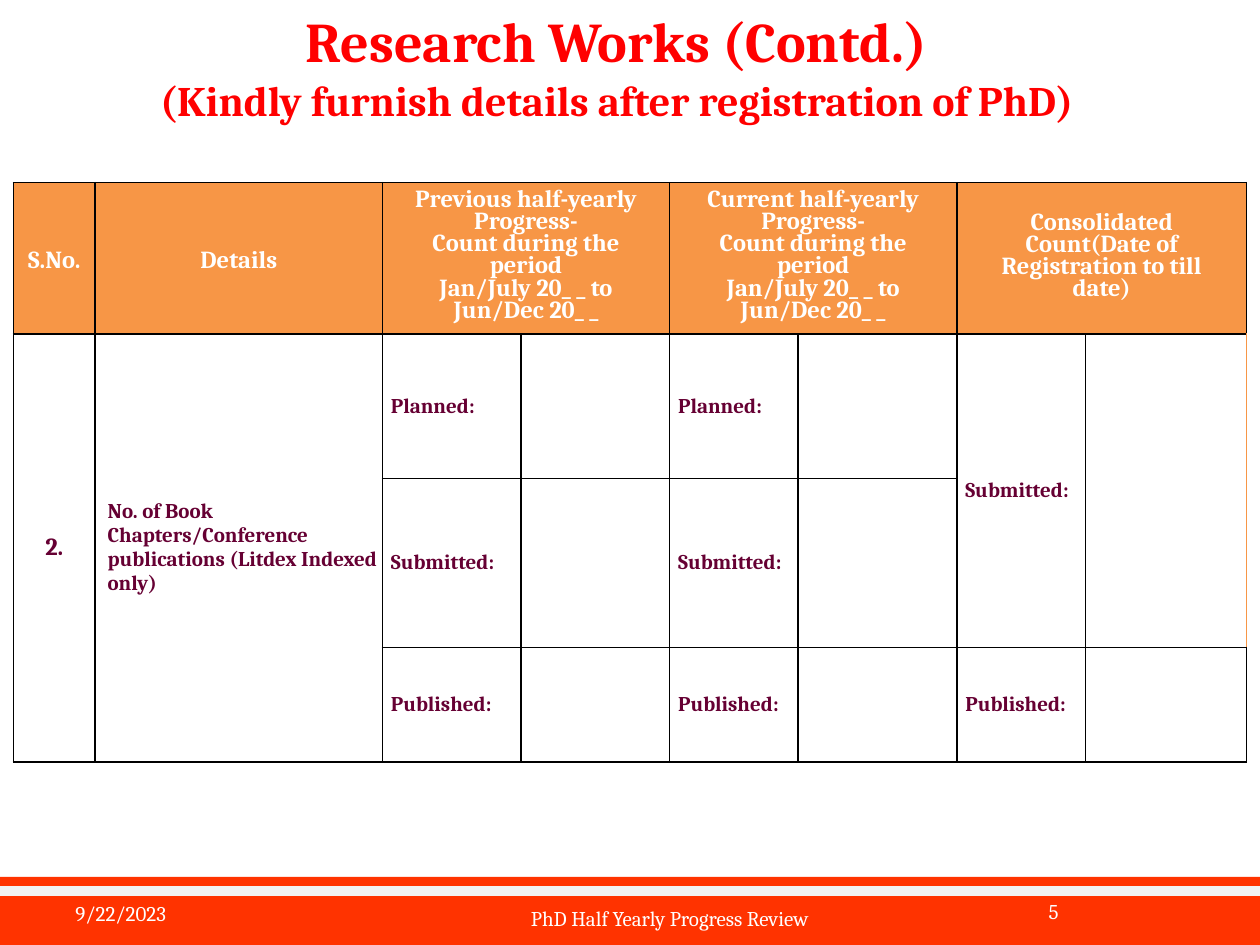
"""Build the half-yearly research progress slide."""
from lxml import etree
from pptx import Presentation
from pptx import util as u
from pptx.dml.color import RGBColor
from pptx.enum import shapes, text
from pptx.oxml.ns import qn

THEME = dict(font="Cambria", title="FF0000", head="F79646", body="660033",
             bar="FF3300", stripe="F2F2F2", white="FFFFFF", grid="000000",
             big=32, sub=24, mid=14, small=12)
LEFT, MID, RIGHT = text.PP_ALIGN.LEFT, text.PP_ALIGN.CENTER, text.PP_ALIGN.RIGHT

TITLE = [("Research Works (Contd.)", THEME["big"]),
         ("(Kindly furnish details after registration of PhD)", THEME["sub"])]
SPAN = "Jan/July 20_ _ to Jun/Dec 20_ _"
HEADS = {
    0: ["S.No."],
    1: ["Details"],
    2: ["Previous half-yearly Progress-", "Count during the period", SPAN],
    4: ["Current half-yearly Progress-", "Count during the period", SPAN],
    6: ["Consolidated Count(Date of Registration to till date)"],
}
ITEM = ("2.", "No. of Book Chapters/Conference publications (Litdex Indexed only)")
STAGES = {2: ["Planned:", "Submitted:", "Published:"],
          4: ["Planned:", "Submitted:", "Published:"],
          6: ["Submitted:", "", "Published:"]}
MERGES = [(0, 2, 0, 3), (0, 4, 0, 5), (0, 6, 0, 7),
          (1, 0, 3, 0), (1, 1, 3, 1), (1, 6, 2, 6), (1, 7, 2, 7)]
COLS = [1.65, 5.79, 2.79, 3, 2.59, 3.2, 2.59, 3.25]
ROWS = [3.05, 2.92, 3.4, 2.31]
FOOT = [("9/22/2023", 1.27, 18.03, 5.92, LEFT),
        ("5", 18.62, 17.98, 2.97, RIGHT),
        ("PhD Half Yearly Progress Review", 8.69, 18.14, 9.63, MID)]


def color(key):
    return RGBColor.from_string(THEME[key])


def style(par, size, tint, bold=True, align=LEFT):
    par.alignment = align
    for run in par.runs:
        font = run.font
        font.name, font.size, font.bold = THEME["font"], u.Pt(size), bold
        font.color.rgb = color(tint)


def border(cell, tints):
    props = cell._tc.get_or_add_tcPr()
    for side, tint in zip("LRTB", tints):
        line = etree.SubElement(props, qn(f"a:ln{side}"), w=str(u.Pt(1)))
        fill = etree.SubElement(line, qn("a:solidFill"))
        etree.SubElement(fill, qn("a:srgbClr"), val=THEME[tint])


def write(cell, lines, size, tint, align):
    cell.text_frame.text = "\n".join(lines)
    for par in cell.text_frame.paragraphs:
        style(par, size, tint, align=align)


def add_title(slide):
    box = slide.shapes.title
    box.left, box.top, box.width, box.height = map(u.Cm, (0.53, 0.74, 23.8, 1.17))
    frame = box.text_frame
    frame.text = "\n".join(line for line, size in TITLE)
    frame.auto_size = text.MSO_AUTO_SIZE.NONE
    frame.vertical_anchor = text.MSO_ANCHOR.MIDDLE
    for par, (line, size) in zip(frame.paragraphs, TITLE):
        style(par, size, "title", align=MID)


def add_grid(slide):
    place = map(u.Cm, (0.27, 3.68, sum(COLS), sum(ROWS)))
    grid = slide.shapes.add_table(len(ROWS), len(COLS), *place).table
    grid.first_row = grid.horz_banding = False
    for col, size in zip(grid.columns, COLS):
        col.width = u.Cm(size)
    for row, size in zip(grid.rows, ROWS):
        row.height = u.Cm(size)
    for r in range(len(ROWS)):
        for c in range(len(COLS)):
            cell = grid.cell(r, c)
            edge = "head" if c == 7 and r in (1, 2) else "grid"
            border(cell, ("grid", edge, "grid", "grid"))
            cell.fill.solid()
            cell.fill.fore_color.rgb = color("white" if r else "head")
            cell.vertical_anchor = text.MSO_ANCHOR.MIDDLE
            cell.margin_left = cell.margin_right = u.Cm(0.17)
            cell.margin_top = cell.margin_bottom = 0
    for r, c, low, last in MERGES:
        grid.cell(r, c).merge(grid.cell(low, last))

    for c, lines in HEADS.items():
        cell = grid.cell(0, c)
        write(cell, lines, THEME["mid"], "white", MID)
        for i, par in enumerate(cell.text_frame.paragraphs):
            par.line_spacing = 1.15 if c < 2 else u.Pt(12.9 if i == 2 else 12.6)
            if c >= 2:
                for side in ("marL", "marR"):
                    par._p.get_or_add_pPr().set(side, str(u.Cm(0.25)))
    write(grid.cell(1, 0), ITEM[:1], THEME["mid"], "body", MID)
    work = grid.cell(1, 1)
    write(work, ITEM[1:], THEME["small"], "body", LEFT)
    work.margin_left, work.margin_right = u.Cm(0.25), 0
    for c, names in STAGES.items():
        for r, name in enumerate(names, 1):
            if name:
                write(grid.cell(r, c), [name], THEME["small"], "body", LEFT)


def add_foot(slide):
    bar = slide.shapes.add_shape(shapes.MSO_SHAPE.RECTANGLE,
                                 *map(u.Cm, (0, 17.68, 25.45, 1.45)))
    bar.shadow.inherit = False
    bar.fill.solid()
    bar.fill.fore_color.rgb = color("bar")
    bar.line.fill.background()
    rule = slide.shapes.add_connector(shapes.MSO_CONNECTOR.STRAIGHT,
                                      *map(u.Cm, (-0.05, 17.96, 25.4, 17.96)))
    rule.line.color.rgb, rule.line.width = color("stripe"), u.Pt(6)
    etree.SubElement(rule._element.spPr, qn("a:effectLst"))
    for words, left, top, width, align in FOOT:
        box = slide.shapes.add_textbox(*map(u.Cm, (left, top, width, 1.02)))
        box.text_frame.word_wrap = True
        box.text_frame.text = words
        style(box.text_frame.paragraphs[0], THEME["small"], "white", False, align)


def main():
    deck = Presentation()
    deck.slide_width, deck.slide_height = u.Cm(25.4), u.Cm(19.05)
    slide = deck.slides.add_slide(deck.slide_layouts[5])
    add_foot(slide)
    add_title(slide)
    add_grid(slide)
    deck.save("out.pptx")


if __name__ == "__main__":
    main()
